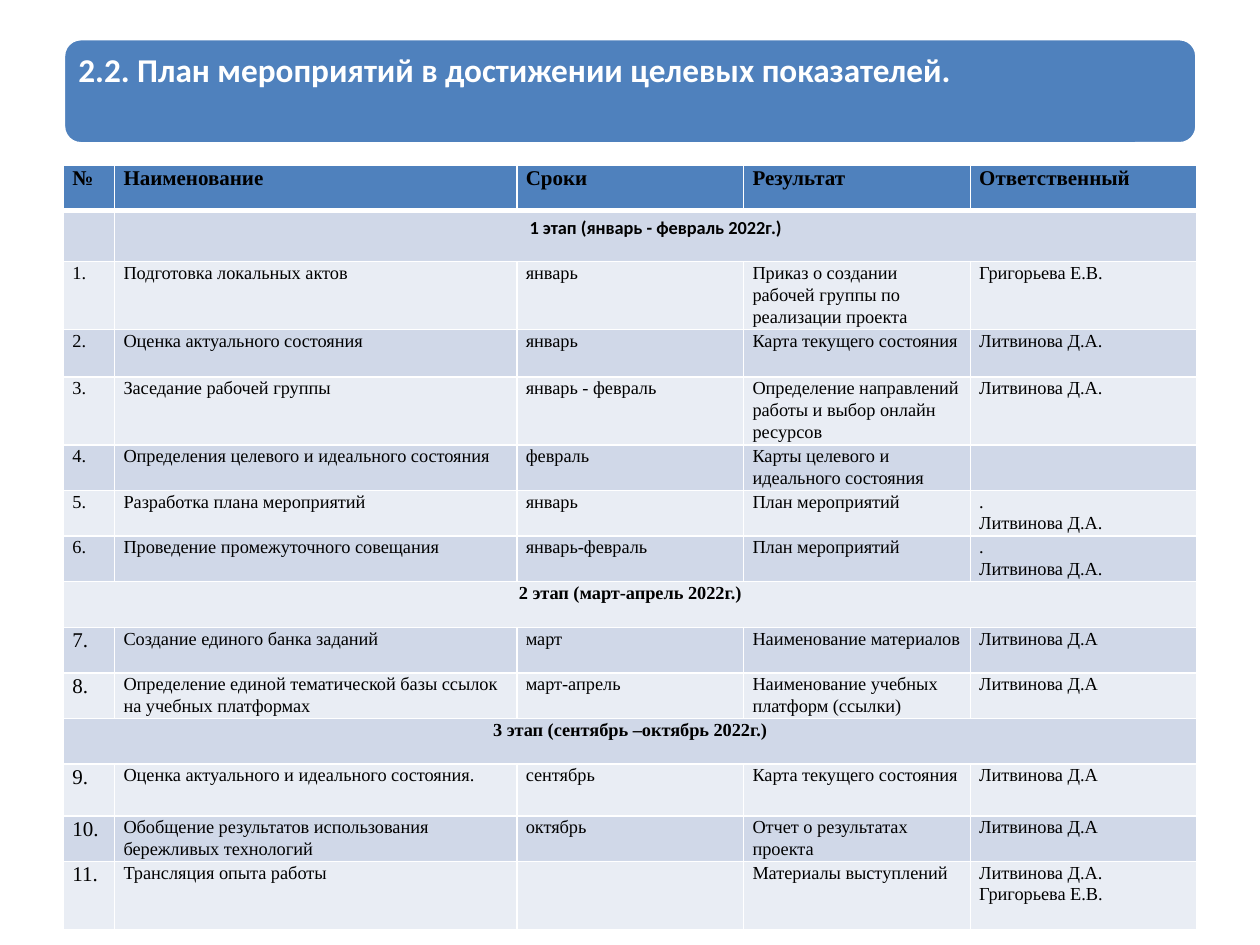
import dataclasses

import lxml.etree
import pptx
import pptx.dml.color
import pptx.enum.shapes
import pptx.enum.text
import pptx.oxml.ns
import pptx.util

Cm = pptx.util.Cm
Align = pptx.enum.text.PP_ALIGN


@dataclasses.dataclass(frozen=True)
class Theme:
    accent: str = "4F81BD"
    band_dark: str = "D0D8E8"
    band_light: str = "E9EDF4"
    ink: str = "000000"
    white: str = "FFFFFF"
    heading_font: str = "Calibri"
    body_font: str = "Times New Roman"
    title_size: float = 19
    large_size: float = 12
    body_size: float = 10.5


THEME = Theme()

COLUMN_WIDTHS = [1.03, 8.11, 4.57, 4.57, 4.57]
HEADINGS = ["№", "Наименование", "Сроки", "Результат", "Ответственный"]
TWO_LINES, THREE_LINES = 0.92, 1.37

# Each stage: heading, first column of the heading, heading height,
# size of the numbers, and tasks as (row height, cells after the number)
STAGES = [
    ("1 этап (январь - февраль 2022г.)", 1, 1.01, THEME.body_size, [
        (THREE_LINES, "Подготовка локальных актов", "январь",
         "Приказ о создании рабочей группы по реализации проекта", "Григорьева Е.В."),
        (0.95, "Оценка актуального состояния", "январь",
         "Карта текущего состояния", "Литвинова Д.А."),
        (THREE_LINES, "Заседание рабочей группы", "январь - февраль",
         "Определение направлений работы и выбор онлайн ресурсов", "Литвинова Д.А."),
        (TWO_LINES, "Определения целевого и идеального состояния", "февраль",
         "Карты целевого и идеального состояния", ""),
        (TWO_LINES, "Разработка плана мероприятий", "январь",
         "План мероприятий", ".\nЛитвинова Д.А."),
        (TWO_LINES, "Проведение промежуточного совещания", "январь-февраль",
         "План мероприятий", ".\nЛитвинова Д.А."),
    ]),
    ("2 этап (март-апрель 2022г.)", 0, TWO_LINES, THEME.large_size, [
        (TWO_LINES, "Создание единого банка заданий", "март",
         "Наименование материалов", "Литвинова Д.А"),
        (TWO_LINES, "Определение единой тематической базы ссылок на учебных платформах",
         "март-апрель", "Наименование учебных платформ (ссылки)", "Литвинова Д.А"),
    ]),
    ("3 этап (сентябрь –октябрь 2022г.)", 0, TWO_LINES, THEME.large_size, [
        (1.04, "Оценка актуального и идеального состояния.", "сентябрь",
         "Карта текущего состояния", "Литвинова Д.А"),
        (TWO_LINES, "Обобщение результатов использования бережливых технологий",
         "октябрь", "Отчет о результатах проекта", "Литвинова Д.А"),
        (THREE_LINES, "Трансляция опыта работы", "",
         "Материалы выступлений", "Литвинова Д.А.\nГригорьева Е.В."),
    ]),
]


def rgb(value):
    return pptx.dml.color.RGBColor.from_string(value)


def write(frame, text, *, size=THEME.body_size, font=THEME.body_font,
          color=THEME.ink, bold=False, align=Align.LEFT, spacing=1.07):
    """Fill a text frame, one paragraph for each line of text."""
    frame.word_wrap = True
    frame.text = text
    for paragraph in frame.paragraphs:
        paragraph.alignment = align
        paragraph.line_spacing = spacing
        for run in paragraph.runs:
            run.font.size = pptx.util.Pt(size)
            run.font.name = font
            run.font.bold = bold
            run.font.color.rgb = rgb(color)


def style_cell(cell, fill, bottom=1, margin=0):
    """Set margins, white borders and fill of a table cell."""
    cell.margin_left = cell.margin_right = Cm(0.18)
    cell.margin_top = cell.margin_bottom = Cm(margin)
    properties = cell._tc.get_or_add_tcPr()
    for side, width in (("L", 1), ("R", 1), ("T", 1), ("B", bottom)):
        border = lxml.etree.SubElement(properties, pptx.oxml.ns.qn(f"a:ln{side}"),
                                       w=str(pptx.util.Pt(width)))
        paint = lxml.etree.SubElement(border, pptx.oxml.ns.qn("a:solidFill"))
        lxml.etree.SubElement(paint, pptx.oxml.ns.qn("a:srgbClr"), val=THEME.white)
    cell.fill.solid()
    cell.fill.fore_color.rgb = rgb(fill)


def add_banner(slide, left, top, width, height):
    """Rounded banner with the slide title on it."""
    banner = slide.shapes.add_shape(
        pptx.enum.shapes.MSO_SHAPE.ROUNDED_RECTANGLE,
        Cm(left), Cm(top), Cm(width), Cm(height))
    banner.shadow.inherit = False
    banner.fill.solid()
    banner.fill.fore_color.rgb = rgb(THEME.accent)
    banner.line.color.rgb = rgb(THEME.white)
    banner.line.width = pptx.util.Pt(2)

    inset = 0.1
    title = slide.shapes.title
    title.left, title.top = Cm(left + inset), Cm(top + inset)
    title.width, title.height = Cm(width - 2 * inset), Cm(height - 2 * inset)
    frame = title.text_frame
    frame.auto_size = pptx.enum.text.MSO_AUTO_SIZE.NONE
    frame.vertical_anchor = pptx.enum.text.MSO_ANCHOR.TOP
    frame.margin_left = frame.margin_right = Cm(0.2)
    frame.margin_top = frame.margin_bottom = Cm(0.2)
    write(frame, "2.2. План мероприятий в достижении целевых показателей.",
          size=THEME.title_size, font=THEME.heading_font, color=THEME.white,
          bold=True, spacing=0.9)
    # The title stands in front of the banner
    banner.element.addnext(title.element)


def add_plan(slide, left, top, width):
    """Table of stages and their numbered tasks."""
    heights = [0.91]
    for _, _, stage_height, _, tasks in STAGES:
        heights += [stage_height] + [task[0] for task in tasks]
    plan = slide.shapes.add_table(
        len(heights), len(HEADINGS), Cm(left), Cm(top),
        Cm(width), Cm(sum(heights))).table
    for column, column_width in zip(plan.columns, COLUMN_WIDTHS):
        column.width = Cm(column_width * width / sum(COLUMN_WIDTHS))
    for row, height in zip(plan.rows, heights):
        row.height = Cm(height)

    # Header
    for cell, heading in zip(plan.rows[0].cells, HEADINGS):
        style_cell(cell, THEME.accent, bottom=3)
        write(cell.text_frame, heading, size=THEME.large_size, bold=True)

    # Banded rows
    for index in range(1, len(heights)):
        band = THEME.band_dark if index % 2 else THEME.band_light
        for cell in plan.rows[index].cells:
            style_cell(cell, band, margin=0.13 if index == 1 else 0)

    # Stages and tasks
    index, number = 1, 1
    for name, first, _, number_size, tasks in STAGES:
        stage = plan.cell(index, first)
        stage.merge(plan.cell(index, len(HEADINGS) - 1))
        is_first = index == 1
        write(stage.text_frame, name, bold=True, align=Align.CENTER,
              font=THEME.heading_font if is_first else THEME.body_font,
              spacing=1.0 if is_first else 1.07)
        index += 1
        for _, *details in tasks:
            write(plan.cell(index, 0).text_frame, f"{number}.", size=number_size)
            for column, detail in enumerate(details, start=1):
                write(plan.cell(index, column).text_frame, detail)
            index += 1
            number += 1


def main():
    deck = pptx.Presentation()
    deck.slide_width, deck.slide_height = Cm(25.4), Cm(19.05)
    slide = deck.slides.add_slide(deck.slide_layouts[5])
    add_banner(slide, left=1.28, top=0.78, width=22.85, height=2.12)
    add_plan(slide, left=1.28, top=3.33, width=22.85)
    deck.save("out.pptx")


if __name__ == "__main__":
    main()
